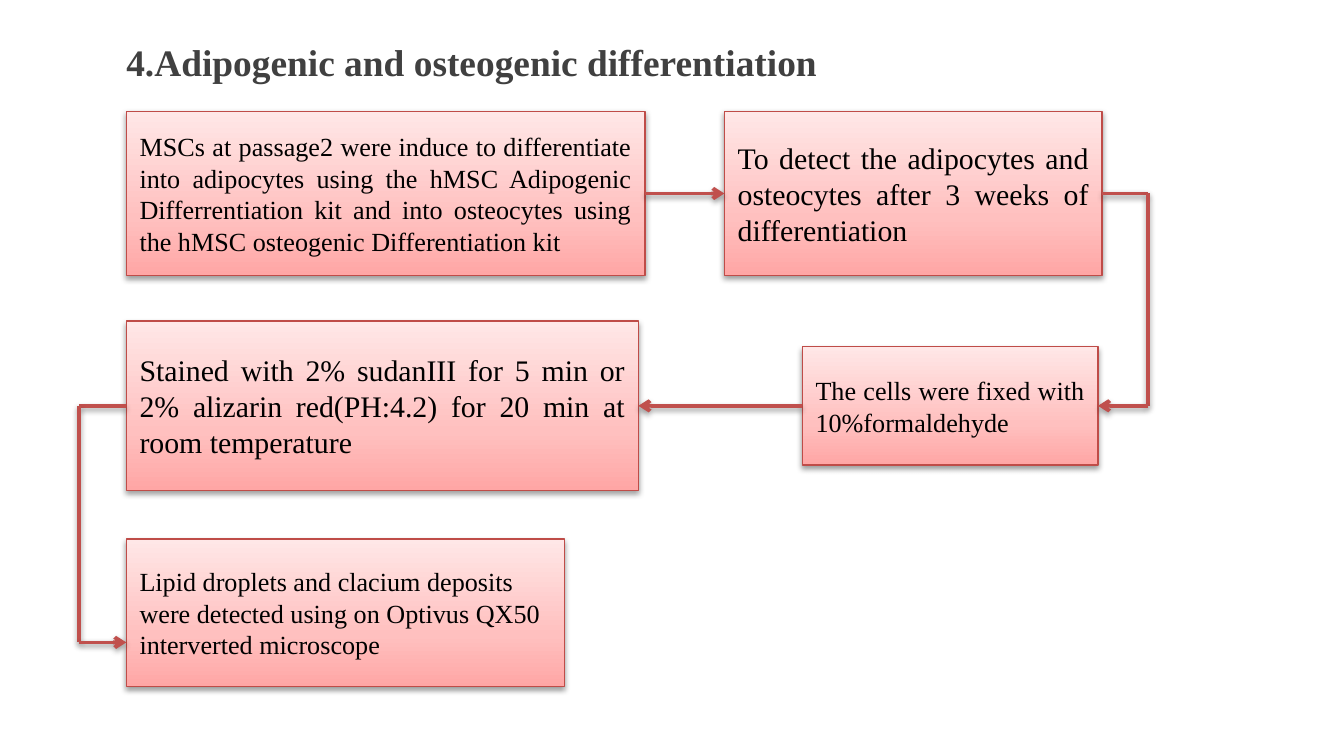
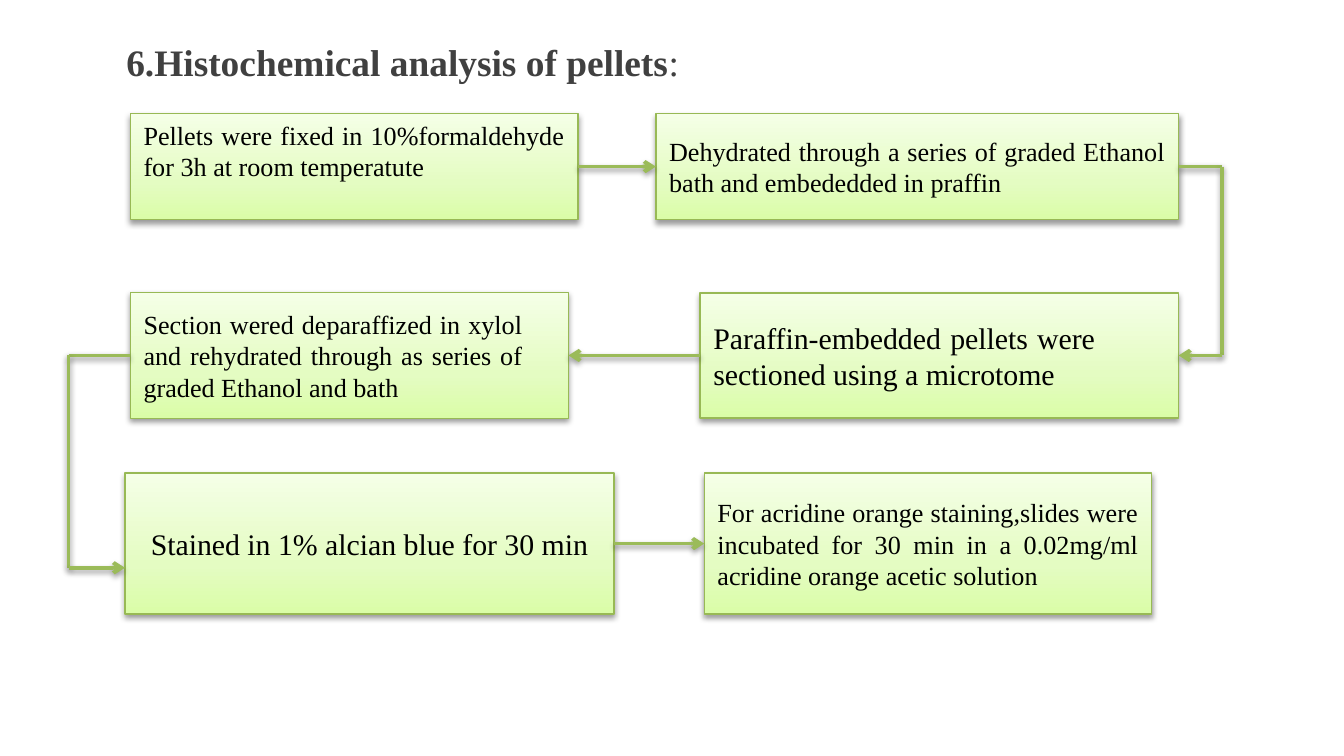
from lxml import etree
from pptx import Presentation
from pptx.dml.color import RGBColor
from pptx.enum.shapes import MSO_CONNECTOR, MSO_SHAPE
from pptx.enum.text import MSO_ANCHOR, PP_ALIGN
from pptx.oxml import parse_xml
from pptx.oxml.ns import nsdecls, qn
from pptx.util import Emu, Inches, Pt

# Shared look
FONT = "Times New Roman"
INK = {"title": "404040", "text": "000000"}
RED = {"stops": ["FFA6A5", "FFC0BF", "FFE7E7"], "edge": "BF4C48", "line": "C0504D"}
GREEN = {"stops": ["DAFDA7", "E4FCC2", "F5FFE7"], "edge": "98B955", "line": "9BBB59"}
STOPS = [0, 35, 100]
ALIGN = {"j": PP_ALIGN.JUSTIFY, "l": PP_ALIGN.LEFT, "c": PP_ALIGN.CENTER}
LEFT, RIGHT = 1, 3

# Lengths count cells of a grid that is 100 columns wide
COLS = 100
PAGE = Inches(10)
CELL = PAGE // COLS

# Boxes in flow order: row, left, width, height, size, align, text, extra insets
# Links in the same order: None is direct, else (rail column, drop below the middle)
PAGES = [
    {
        "title": [("4.Adipogenic and osteogenic differentiation", True)],
        "hue": RED,
        "rows": [14.4, 30.2, 45.6],
        "boxes": [
            (0, 9.4, 38.6, 12.2, 14, "j", "MSCs at passage2 were induce to differentiate into "
             "adipocytes using the hMSC Adipogenic Differrentiation kit and into osteocytes "
             "using the hMSC osteogenic Differentiation kit", {}),
            (0, 53.9, 28.1, 12.2, 16, "j", "To detect the adipocytes and osteocytes after "
             "3 weeks of differentiation", {}),
            (1, 59.7, 22, 8.8, 14, "j", "The cells were fixed with 10%formaldehyde", {}),
            (1, 9.4, 38.1, 12.6, 16, "j", "Stained with 2% sudanIII for 5 min or 2% alizarin "
             "red(PH:4.2) for 20 min at room temperature", {}),
            (2, 9.4, 32.6, 11, 14, "l", "Lipid droplets and clacium deposits were detected "
             "using on Optivus QX50 interverted microscope", {}),
        ],
        "links": [None, (85.4, 0), None, (5.9, 2.2)],
    },
    {
        "title": [("6.Histochemical analysis of pellets", True), (":", False)],
        "hue": GREEN,
        "rows": [12.4, 26.45, 40.45],
        "boxes": [
            (0, 9.7, 33.3, 7.9, 14, "j", "Pellets were fixed in 10%formaldehyde for 3h at "
             "room temperatute", {"bottom": 2.9}),
            (0, 48.8, 38.9, 7.9, 14, "j", "Dehydrated through a series of graded Ethanol "
             "bath and embededded in praffin", {}),
            (1, 52.1, 35.6, 9.3, 16, "j", "Paraffin-embedded pellets were sectioned using "
             "a microtome", {"right": 6.2}),
            (1, 9.7, 32.6, 9.4, 14, "j", "Section wered deparaffized in xylol and rehydrated "
             "through as series of graded Ethanol and bath", {"right": 3.4}),
            (2, 9.3, 36.4, 10.5, 16, "c", "Stained in 1% alcian blue for 30 min", {}),
            (2, 52.4, 33.3, 10.5, 14, "j", "For acridine orange staining,slides were incubated "
             "for 30 min in a 0.02mg/ml acridine orange acetic solution", {}),
        ],
        "links": [None, (90.9, 0), None, (5.1, 1.8), None],
    },
]


def span(n):
    return Emu(round(n * CELL))


def tint(code):
    return RGBColor.from_string(code)


def write(para, text, size, ink, bold=False):
    run = para.add_run()
    run.text = text
    font = run.font
    font.name, font.size, font.bold = FONT, Pt(size), bold
    font.color.rgb = tint(ink)


def shade(part):
    part._element.spPr.append(parse_xml(
        f'<a:effectLst {nsdecls("a")}><a:outerShdw blurRad="{Pt(3.1)}" dist="{Pt(1.6)}" '
        'dir="5400000" rotWithShape="0"><a:srgbClr val="000000"><a:alpha val="38000"/>'
        '</a:srgbClr></a:outerShdw></a:effectLst>'))


def blend(fill, part, codes):
    fill.gradient()
    fill.gradient_angle = 90
    group = part._element.spPr.find(qn("a:gradFill")).find(qn("a:gsLst"))
    for old in list(group):
        group.remove(old)
    for stop, code in zip(STOPS, codes):
        mark = etree.SubElement(group, qn("a:gs"), pos=str(stop * 1000))
        etree.SubElement(mark, qn("a:srgbClr"), val=code)


def add_title(slide, runs):
    title = slide.shapes.title
    title.left, title.top, title.width, title.height = map(span, (5.1, 2.4, 85.8, 7.6))
    frame = title.text_frame
    frame.vertical_anchor = MSO_ANCHOR.TOP
    frame.margin_left = span(4.3)
    para = frame.paragraphs[0]
    para.alignment = PP_ALIGN.LEFT
    for text, bold in runs:
        write(para, text, 20, INK["title"], bold)


def add_box(slide, rows, hue, box):
    row, left, width, height, size, align, text, insets = box
    top = rows[row] - height / 2
    part = slide.shapes.add_shape(
        MSO_SHAPE.RECTANGLE, *map(span, (left, top, width, height)))
    blend(part.fill, part, hue["stops"])
    part.line.color.rgb = tint(hue["edge"])
    part.line.width = Pt(0.75)
    shade(part)
    frame = part.text_frame
    frame.word_wrap = True
    frame.vertical_anchor = MSO_ANCHOR.MIDDLE
    for side, gap in insets.items():
        setattr(frame, f"margin_{side}", span(gap))
    para = frame.paragraphs[0]
    para.alignment = ALIGN[align]
    write(para, text, size, INK["text"])
    return part


def add_line(slide, hue, start, end, arrow=False):
    line = slide.shapes.add_connector(MSO_CONNECTOR.STRAIGHT, *start, *end)
    line.line.color.rgb = tint(hue["line"])
    line.line.width = Pt(2)
    if arrow:
        etree.SubElement(line.line._get_or_add_ln(), qn("a:tailEnd"), type="arrow")
    shade(line)
    return line


def port(part, side):
    x = part.left + (part.width if side == RIGHT else 0)
    return x, part.top + part.height // 2


def add_link(slide, hue, a, b, link):
    if link is None:
        out, into = (RIGHT, LEFT) if b.left > a.left else (LEFT, RIGHT)
        line = add_line(slide, hue, port(a, out), port(b, into), True)
        line.begin_connect(a, out)
        line.end_connect(b, into)
        return
    # Run out to the rail, along it and back in
    rail, drop = span(link[0]), span(link[1])
    side = RIGHT if rail > a.left else LEFT
    start, (x, y) = port(a, side), port(b, side)
    end = (x, y + drop)
    first = add_line(slide, hue, start, (rail, start[1]))
    first.begin_connect(a, side)
    add_line(slide, hue, (rail, start[1]), (rail, end[1]))
    last = add_line(slide, hue, (rail, end[1]), end, True)
    if not drop:
        last.end_connect(b, side)


def main():
    deck = Presentation()
    deck.slide_width, deck.slide_height = PAGE, Inches(5.625)
    for page in PAGES:
        slide = deck.slides.add_slide(deck.slide_layouts[5])
        hue = page["hue"]
        add_title(slide, page["title"])
        parts = [add_box(slide, page["rows"], hue, box) for box in page["boxes"]]
        for a, b, link in zip(parts, parts[1:], page["links"]):
            add_link(slide, hue, a, b, link)
    deck.save("out.pptx")


if __name__ == "__main__":
    main()
